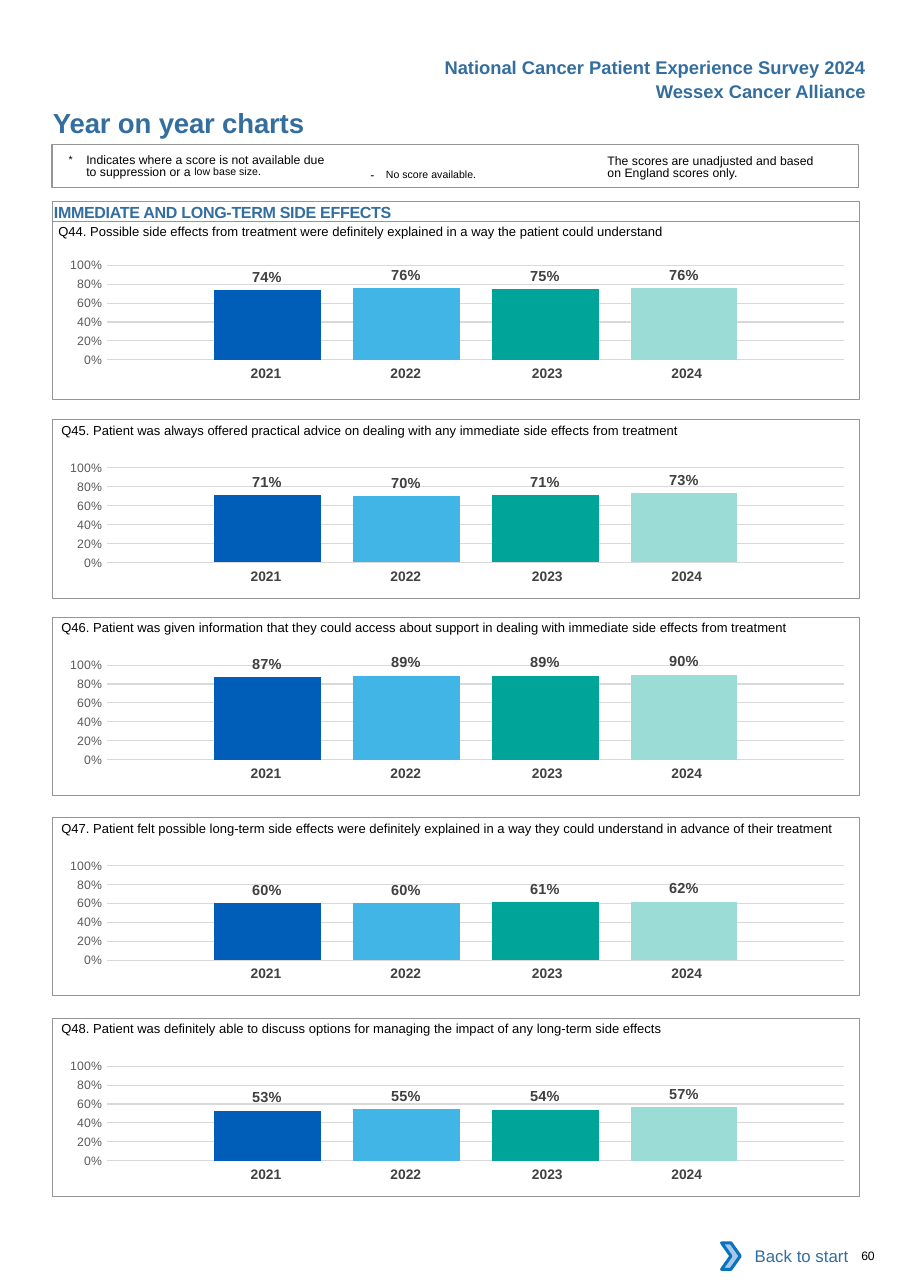
from dataclasses import dataclass

from lxml import etree
from pptx import Presentation
from pptx.chart.data import CategoryChartData
from pptx.dml.color import RGBColor
from pptx.enum.chart import XL_CHART_TYPE, XL_LABEL_POSITION, XL_TICK_MARK
from pptx.enum.shapes import MSO_SHAPE
from pptx.enum.text import MSO_ANCHOR, MSO_AUTO_SIZE, PP_ALIGN
from pptx.oxml.ns import qn
from pptx.util import Pt

TOP, MIDDLE = MSO_ANCHOR.TOP, MSO_ANCHOR.MIDDLE
LEFT, CENTER, RIGHT = PP_ALIGN.LEFT, PP_ALIGN.CENTER, PP_ALIGN.RIGHT
RECTANGLE, CHEVRON = MSO_SHAPE.RECTANGLE, MSO_SHAPE.CHEVRON
COLUMNS, OUTSIDE_END = XL_CHART_TYPE.COLUMN_CLUSTERED, XL_LABEL_POSITION.OUTSIDE_END
NO_TICKS, NO_AUTOFIT = XL_TICK_MARK.NONE, MSO_AUTO_SIZE.NONE
PLAIN_TABLE = "{2D5ABB26-0587-4C30-8999-92F81FD0307C}"


@dataclass(frozen=True)
class Theme:
    font: str = "Arial"
    chart_font: str = "Calibri"
    blue: str = "336E9F"
    black: str = "000000"
    white: str = "FFFFFF"
    frame: str = "939598"
    grid: str = "D9D9D9"
    axis_text: str = "595959"
    label_text: str = "404040"
    year_text: str = "414042"
    arrow_fill: str = "A8C7E9"
    arrow_line: str = "0A74BB"
    bars: tuple = ("005EB8", "41B6E6", "00A499", "9CDCD7")
    title: float = 18
    header: float = 12
    link: float = 11
    heading: float = 10.5
    bar_label: float = 9.5
    year: float = 9
    question: float = 8.5
    small: float = 8


@dataclass(frozen=True)
class Panel:
    question: str
    top: float
    scores: tuple
    chart_drop: float = 18
    indent: float = 5.6


THEME = Theme()
YEARS = ("2021", "2022", "2023", "2024")
YEAR_WIDTHS = (91.4, 91.4, 96.5, 91.4)
YEAR_RIGHT_INSETS = (0, 0, 2.9, 8.6)
PLOT_AREA = {"x": 0.079, "y": 0.145, "w": 0.915, "h": 0.666}
FRAME_LEFT, FRAME_WIDTH, PANEL_HEIGHT = 34.5, 527, 116.6
PANELS = (
    Panel("Q44. Possible side effects from treatment were definitely explained in a way "
          "the patient could understand", 144.7, (0.74, 0.76, 0.75, 0.76), 15.2, 3.6),
    Panel("Q45. Patient was always offered practical advice on dealing with any immediate "
          "side effects from treatment", 274.3, (0.71, 0.70, 0.71, 0.73)),
    Panel("Q46. Patient was given information that they could access about support in "
          "dealing with immediate side effects from treatment", 403.2, (0.87, 0.89, 0.89, 0.90)),
    Panel("Q47. Patient felt possible long-term side effects were definitely explained in a "
          "way they could understand in advance of their treatment", 534.2, (0.60, 0.60, 0.61, 0.62)),
    Panel("Q48. Patient was definitely able to discuss options for managing the impact of "
          "any long-term side effects", 665.3, (0.53, 0.55, 0.54, 0.57)),
)


def set_font(font, size, color, bold=False, name=THEME.font):
    for attribute, value in {"size": Pt(size), "bold": bold, "name": name}.items():
        setattr(font, attribute, value)
    font.color.rgb = RGBColor.from_string(color)


def write(frame, runs, color=THEME.black, bold=False, align=LEFT, anchor=TOP,
          insets=(0, 0, 0, 0), wrap=True):
    """Fill a text frame with one paragraph of (text, size, XML run attributes)."""
    settings = {"auto_size": NO_AUTOFIT, "word_wrap": wrap, "vertical_anchor": anchor}
    settings.update(zip(("margin_left", "margin_top", "margin_right", "margin_bottom"),
                        map(Pt, insets)))
    for attribute, value in settings.items():
        setattr(frame, attribute, value)
    paragraph = frame.paragraphs[0]
    paragraph.alignment = align
    for text, size, attributes in runs:
        run = paragraph.add_run()
        run.text = text
        set_font(run.font, size, color, bold)
        for key, value in attributes.items():
            run.font._element.set(key, str(value))
    return paragraph


def add_text(slide, box, runs, **settings):
    return write(slide.shapes.add_textbox(*map(Pt, box)).text_frame, runs, **settings)


def add_outline(slide, box, preset=RECTANGLE, fill=None, line=THEME.frame, weight=0.5):
    shape = slide.shapes.add_shape(preset, *map(Pt, box))
    shape.shadow.inherit = False
    if fill:
        shape.fill.solid()
        shape.fill.fore_color.rgb = RGBColor.from_string(fill)
    else:
        shape.fill.background()
    if line:
        shape.line.color.rgb = RGBColor.from_string(line)
        shape.line.width = Pt(weight)
    else:
        shape.line.fill.background()
    return shape


def add_header(slide, right, top):
    lines = ("National Cancer Patient Experience Survey 2024", "Wessex Cancer Alliance")
    for row, line in enumerate(lines):
        add_text(slide, (right - 300, top + row * 16, 300, 21.6), [(line, THEME.header, {})],
                 color=THEME.blue, bold=True, align=RIGHT, insets=(7.2, 3.6, 7.2, 3.6))
    title = slide.shapes.title
    title.left, title.top, title.width, title.height = map(Pt, (34.2, 69.1, 324, 21.6))
    write(title.text_frame, [("Year on year charts", THEME.title, {"spc": -10})],
          color=THEME.blue, bold=True, insets=(0.4, 0, 0, 0))


def add_notes_box(slide, left, top, width, height):
    add_outline(slide, (left, top, width, height), weight=0.75)
    raised = THEME.header
    suppression = add_text(
        slide, (left + 10.9, top + 5, 171, 24),
        [("*\t", raised, {"baseline": 3000}),
         ("Indicates where a score is not available due to suppression or a ", THEME.small, {}),
         ("low base size.", raised, {"baseline": 7000})], insets=(0, 2.2, 0, 0))
    indents = suppression._p.get_or_add_pPr()
    indents.set("marL", str(Pt(11.5)))
    indents.set("indent", str(-Pt(11.5)))
    unadjusted = add_text(
        slide, (left + 363, top + 5, 142, 20),
        [("The scores are unadjusted and based on England scores only.", THEME.small, {})],
        insets=(0, 2.2, 0, 0))
    for note in (suppression, unadjusted):
        note.line_spacing = Pt(8.1)
    add_text(slide, (left + 201, top + 7.2, 132, 17.3),
             [("- ", THEME.small, {"spc": 260}),
              ("No score available.", raised, {"baseline": 3000})], insets=(7.2, 3.6, 7.2, 3.6))


def add_section_heading(slide, box):
    heading = add_outline(slide, box)
    write(heading.text_frame,
          [("IMMEDIATE AND LONG-TERM SIDE EFFECTS", THEME.heading, {"spc": -16})],
          color=THEME.blue, bold=True, insets=(0.7, 0.7, 0, 0))


def add_score_chart(slide, box, scores):
    data = CategoryChartData(number_format="0%")
    data.categories = ["1"]
    for number, score in enumerate(scores, 1):
        data.add_series(f"Series {number}", [score])
    chart = slide.shapes.add_chart(COLUMNS, *map(Pt, box), data).chart
    chart.has_legend = chart.has_title = False
    set_font(chart.font, 10, THEME.black, name=THEME.chart_font)
    chart.category_axis.visible = False

    axis = chart.value_axis
    for attribute, value in {"minimum_scale": 0, "maximum_scale": 1, "major_unit": 0.2,
                             "major_tick_mark": NO_TICKS, "minor_tick_mark": NO_TICKS}.items():
        setattr(axis, attribute, value)
    axis.format.line.fill.background()
    axis.major_gridlines.format.line.color.rgb = RGBColor.from_string(THEME.grid)
    axis.major_gridlines.format.line.width = Pt(0.75)
    set_font(axis.tick_labels.font, THEME.small, THEME.axis_text)

    plot = chart.plots[0]
    plot.gap_width, plot.overlap, plot.vary_by_categories = 200, -30, False
    for series, color in zip(plot.series, THEME.bars):
        series.format.fill.solid()
        series.format.fill.fore_color.rgb = RGBColor.from_string(color)
        labels = series.data_labels
        for attribute, value in {"show_value": True, "position": OUTSIDE_END,
                                 "number_format": "0%", "number_format_is_linked": False}.items():
            setattr(labels, attribute, value)
        set_font(labels.font, THEME.bar_label, THEME.label_text, bold=True)

    plot_area = chart._chartSpace.chart.plotArea
    for old_layout in plot_area.findall(qn("c:layout")):
        plot_area.remove(old_layout)
    layout = etree.Element(qn("c:layout"))
    plot_area.insert(0, layout)
    manual = etree.SubElement(layout, qn("c:manualLayout"))
    rules = {"layoutTarget": "inner", "xMode": "edge", "yMode": "edge", **PLOT_AREA}
    for tag, value in rules.items():
        etree.SubElement(manual, qn(f"c:{tag}")).set("val", str(value))


def add_year_row(slide, left, top):
    height = 19.4
    frame = slide.shapes.add_table(1, len(YEARS), Pt(left), Pt(top),
                                   Pt(sum(YEAR_WIDTHS)), Pt(height))
    table = frame.table
    table.first_row = table.horz_banding = False
    table._tbl.tblPr.find(qn("a:tableStyleId")).text = PLAIN_TABLE
    table.rows[0].height = Pt(height)
    for column, (year, width, inset) in enumerate(zip(YEARS, YEAR_WIDTHS, YEAR_RIGHT_INSETS)):
        table.columns[column].width = Pt(width)
        cell = table.cell(0, column)
        cell.fill.background()
        cell.margin_left, cell.margin_right = Pt(7.2), Pt(inset)
        label = cell.text_frame.paragraphs[0]
        label.alignment = CENTER
        run = label.add_run()
        run.text = year
        set_font(run.font, THEME.year, THEME.year_text, bold=True)


def add_question_panel(slide, panel, left, width, height):
    add_text(slide, (left + panel.indent, panel.top - 4.8, width - panel.indent, 17.3),
             [(panel.question, THEME.question, {})], insets=(0, 6.5, 0, 0))
    add_year_row(slide, left + 90, panel.top + panel.chart_drop + 75.8)
    add_score_chart(slide, (left - 6.4, panel.top + panel.chart_drop, width, 92.9), panel.scores)
    add_outline(slide, (left, panel.top, width, height))


def add_footer(slide, left, top):
    link = add_outline(slide, (left + 5, top, 85, 30.2), fill=THEME.white, line=None)
    write(link.text_frame, [("Back to start", THEME.link, {})], color=THEME.blue,
          align=RIGHT, anchor=MIDDLE, insets=(7.2, 3.6, 7.2, 3.6), wrap=False)
    add_outline(slide, (left, top + 6.5, 12.2, 17.3), CHEVRON,
                THEME.arrow_fill, THEME.arrow_line, 2)
    add_text(slide, (left + 84.2, top + 10.1, 36.7, 9.4), [("60", THEME.small, {"spc": -20})],
             insets=(7.2, 0, 0, 0))


def main():
    deck = Presentation()
    deck.slide_width, deck.slide_height = Pt(594.72), Pt(841.68)
    slide = deck.slides.add_slide(deck.slide_layouts[5])
    add_header(slide, right=573.1, top=33.1)
    add_notes_box(slide, FRAME_LEFT - 0.5, 94.3, FRAME_WIDTH, 28.1)
    add_section_heading(slide, (FRAME_LEFT, 131.8, FRAME_WIDTH, 13))
    for panel in PANELS:
        add_question_panel(slide, panel, FRAME_LEFT, FRAME_WIDTH, PANEL_HEIGHT)
    add_footer(slide, left=471.6, top=805.7)
    deck.save("out.pptx")


if __name__ == "__main__":
    main()
